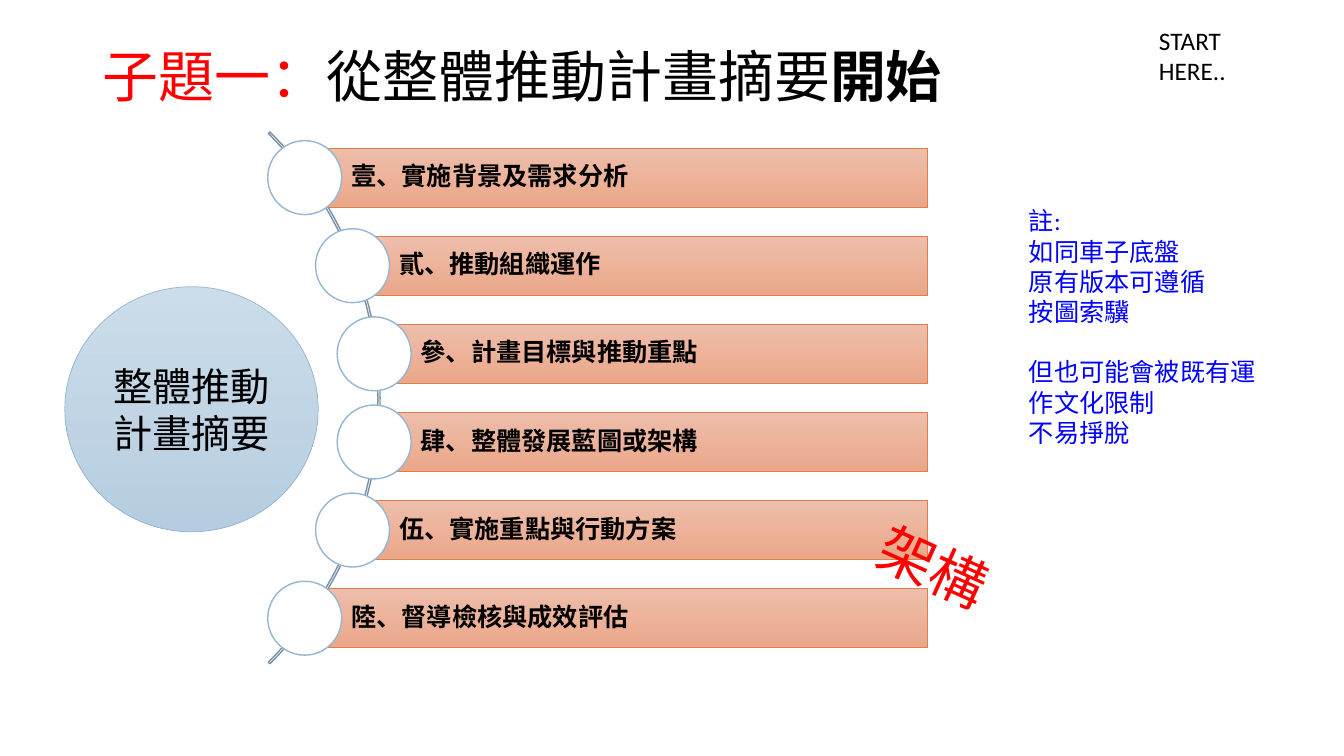
from dataclasses import dataclass
from math import sqrt

from lxml.etree import SubElement
from pptx import Presentation
from pptx.dml.color import RGBColor
from pptx.enum.shapes import MSO_SHAPE
from pptx.enum.text import MSO_ANCHOR, MSO_AUTO_SIZE, PP_ALIGN
from pptx.oxml.ns import qn
from pptx.util import Pt

TITLE_RUNS = [("子題一：", "red", False), ("從整體推動計畫摘要", "black", False), ("開始", "black", True)]
HUB = "整體推動計畫摘要"
SECTIONS = [
    ("壹、實施背景及需求分析", "Arial"),
    ("貳、推動組織運作", "Noto Sans CJK SC"),
    ("參、計畫目標與推動重點", "Noto Sans CJK SC"),
    ("肆、整體發展藍圖或架構", "Noto Sans CJK SC"),
    ("伍、實施重點與行動方案", "Noto Sans CJK SC"),
    ("陸、督導檢核與成效評估", "Noto Sans CJK SC"),
]
START = "START HERE.."
NOTES = ["註:", "如同車子底盤", "原有版本可遵循", "按圖索驥", "但也可能會被既有運作文化限制", "不易掙脫"]
SECOND_NOTE = 4
STAMP = "架構"


@dataclass(frozen=True)
class Theme:
    black: str = "000000"
    red: str = "FF0000"
    blue: str = "0000FF"
    white: str = "FFFFFF"
    arc: str = "7792A8"
    ring: str = "94B6D2"
    bar_line: str = "DD8047"
    bar_fill: tuple = ("EEBEAA", "EBA78A")
    hub_fill: tuple = ("CCDCE9", "B6CDE1")
    heading: str = "Arial"
    body: str = "Calibri"
    title_size: int = 40
    hub_size: int = 28
    text_size: int = 18


THEME = Theme()
CENTER_X, CENTER_Y = 2.9, 284.2
ARC_RADIUS, NODE_RADIUS = 268.6, 266.2
PITCH = 62.94
BAR_RIGHT, BAR_HEIGHT = 662.4, 42
NODE_SIZE = 52.8


def rgb(value):
    return RGBColor.from_string(value)


def format_run(run, size, color, font, bold=False):
    run.font.size = Pt(size)
    run.font.color.rgb = rgb(color)
    run.font.bold = bold
    run.font.name = font
    SubElement(run._r.get_or_add_rPr(), qn("a:ea")).set("typeface", font)


def write(shape, lines, size, color, font, bold=False, align=PP_ALIGN.LEFT, anchor=MSO_ANCHOR.MIDDLE, spacing=None):
    frame = shape.text_frame
    frame.word_wrap = True
    frame.vertical_anchor = anchor
    frame.text = "\n".join(lines)
    for paragraph in frame.paragraphs:
        paragraph.alignment = align
        paragraph.line_spacing = spacing
        for run in paragraph.runs:
            format_run(run, size, color, font, bold)
    return frame


def add_outline(slide, kind, box, fill, line, width):
    shape = slide.shapes.add_shape(kind, *map(Pt, box))
    shape.shadow.inherit = False
    if fill is None:
        shape.fill.background()
    elif isinstance(fill, tuple):
        shape.fill.gradient()
        shape.fill.gradient_angle = 270
        for stop, color in zip(shape.fill.gradient_stops, fill):
            stop.color.rgb = rgb(color)
    else:
        shape.fill.solid()
        shape.fill.fore_color.rgb = rgb(fill)
    shape.line.color.rgb = rgb(line)
    shape.line.width = Pt(width)
    return shape


def add_title(slide):
    title = slide.shapes.title
    title.left, title.top, title.width, title.height = map(Pt, (66.2, 28.8, 670.3, 56.2))
    frame = title.text_frame
    frame.auto_size = MSO_AUTO_SIZE.NONE
    frame.vertical_anchor = MSO_ANCHOR.MIDDLE
    paragraph = frame.paragraphs[0]
    paragraph.alignment = PP_ALIGN.LEFT
    paragraph.line_spacing = 0.9
    for text, color, bold in TITLE_RUNS:
        run = paragraph.add_run()
        run.text = text
        format_run(run, THEME.title_size, getattr(THEME, color), THEME.heading, bold)


def add_sections(slide):
    arc_box = (CENTER_X - ARC_RADIUS, CENTER_Y - ARC_RADIUS, 2 * ARC_RADIUS, 2 * ARC_RADIUS)
    arc = add_outline(slide, MSO_SHAPE.BLOCK_ARC, arc_box, None, THEME.arc, 1)
    for index, value in enumerate((189, 27, 0.003)):
        arc.adjustments[index] = value
    for index, (text, font) in enumerate(SECTIONS):
        offset = (index - (len(SECTIONS) - 1) / 2) * PITCH
        x = CENTER_X + sqrt(NODE_RADIUS ** 2 - offset ** 2)
        y = CENTER_Y + offset
        bar_box = (x, y - BAR_HEIGHT / 2, BAR_RIGHT - x, BAR_HEIGHT)
        bar = add_outline(slide, MSO_SHAPE.RECTANGLE, bar_box, THEME.bar_fill, THEME.bar_line, 0.5)
        frame = write(bar, [text], THEME.text_size, THEME.black, font, bold=True, spacing=0.9)
        frame.margin_left = Pt(33.3)
        node_box = (x - NODE_SIZE / 2, y - NODE_SIZE / 2, NODE_SIZE, NODE_SIZE)
        add_outline(slide, MSO_SHAPE.OVAL, node_box, THEME.white, THEME.ring, 1)


def add_hub(slide):
    hub = add_outline(slide, MSO_SHAPE.OVAL, (46.3, 204.8, 181, 175), THEME.hub_fill, THEME.ring, 0.5)
    frame = write(hub, [HUB], THEME.hub_size, THEME.black, THEME.body, align=PP_ALIGN.CENTER)
    frame.margin_left = frame.margin_right = Pt(3)


def add_text(slide, box, lines, size, color, font, **options):
    shape = slide.shapes.add_textbox(*map(Pt, box))
    write(shape, lines, size, color, font, **options)
    return shape


def main():
    presentation = Presentation()
    presentation.slide_width, presentation.slide_height = Pt(960), Pt(540)
    slide = presentation.slides.add_slide(presentation.slide_layouts[5])
    add_title(slide)
    add_sections(slide)
    add_hub(slide)
    add_text(slide, (820.8, 14.4, 108, 50.4), [START], THEME.text_size, THEME.black, THEME.body,
             anchor=MSO_ANCHOR.TOP)
    notes = add_text(slide, (727.9, 143.3, 180.7, 181.4), NOTES, THEME.text_size, THEME.blue, THEME.body,
                     anchor=MSO_ANCHOR.TOP)
    notes.text_frame.paragraphs[SECOND_NOTE].space_before = Pt(21.6)
    stamp = add_text(slide, (618.5, 380.9, 102.2, 56.2), [STAMP], THEME.title_size, THEME.red, THEME.heading,
                     spacing=0.9)
    stamp.rotation = 24.3
    presentation.save("out.pptx")


if __name__ == "__main__":
    main()
